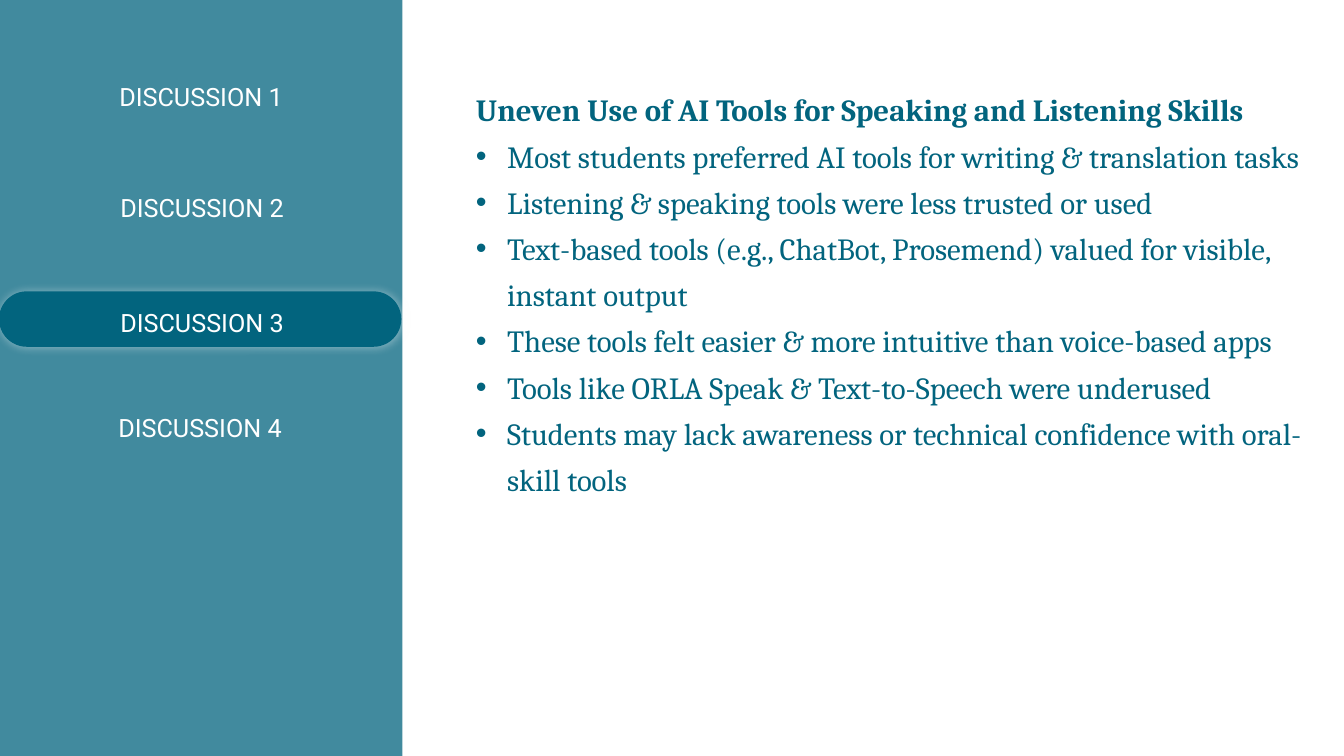
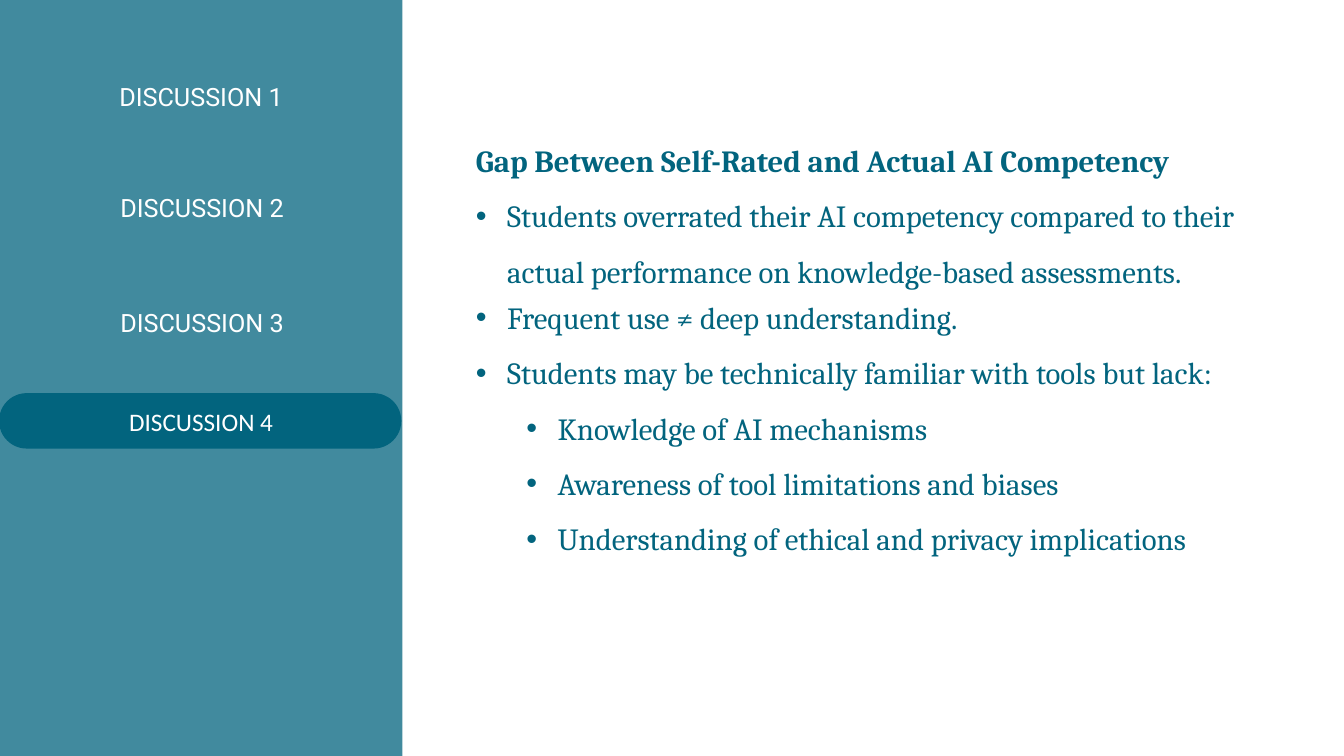
from dataclasses import dataclass

from lxml.etree import SubElement
from pptx import Presentation
from pptx.dml.color import RGBColor
from pptx.enum.shapes import MSO_SHAPE
from pptx.enum.text import MSO_ANCHOR, MSO_AUTO_SIZE, PP_ALIGN
from pptx.oxml.ns import qn
from pptx.util import Emu, Pt

SCALE = 9144  # EMU in one px, 100 px to the inch
WIDTH, HEIGHT = 1333, 750
SIDE = 399
TEXT_X, TEXT_W = 462, 842
HANG = 31
COLORS = {"teal": "02647E", "white": "FFFFFF"}
EXACT = Pt(33)
LOOSE = 1.5


@dataclass
class Label:
    text: str
    x: int
    y: int
    font: str = "Roboto"
    anchor: MSO_ANCHOR = MSO_ANCHOR.TOP


@dataclass
class Item:
    text: str
    spacing: float | Pt = EXACT
    level: int = 0


@dataclass
class Page:
    title: str
    top: int
    row: int
    spacing: float | Pt
    height: int
    items: list[Item]
    labels: list[Label]
    pill: int
    glow: bool = False


def px(*values: int) -> list[Emu]:
    return [Emu(value * SCALE) for value in values]


def write(para, text: str, *, size: int = 22, font: str = "Cambria",
          color: str = "teal", bold: bool = False, align=PP_ALIGN.LEFT,
          spacing: float | Pt | None = None, indent: int = 0,
          bullet: str = "") -> None:
    """Fill a paragraph with one run; a bullet hangs left of the indent."""
    if bullet:
        props = para._p.get_or_add_pPr()
        left, hang = px(indent, -HANG)
        props.set("marL", str(left))
        props.set("indent", str(hang))
        SubElement(props, qn("a:buFont")).set("typeface", "Arial")
        SubElement(props, qn("a:buChar")).set("char", bullet)
    para.alignment = align
    para.space_before = Pt(0)
    if spacing:
        para.line_spacing = spacing
    run = para.add_run()
    run.text = text
    run.font.size = Pt(size)
    run.font.name = font
    run.font.bold = bold
    run.font.color.rgb = RGBColor.from_string(COLORS[color])


def block(slide, kind, x: int, y: int, w: int, h: int):
    shape = slide.shapes.add_shape(kind, *px(x, y, w, h))
    shape.shadow.inherit = False
    shape.fill.solid()
    shape.fill.fore_color.rgb = RGBColor.from_string(COLORS["teal"])
    shape.line.fill.background()
    return shape


def fade(color, percent: int) -> None:
    SubElement(color, qn("a:alpha")).set("val", str(percent * 1000))


def shine(shape) -> None:
    """Put a soft white halo around a shape."""
    effects = shape.element.spPr.find(qn("a:effectLst"))
    halo = SubElement(effects, qn("a:outerShdw"))
    for key, value in {"blurRad": Pt(7), "dist": 0, "dir": 0,
                       "algn": "ctr", "rotWithShape": 0}.items():
        halo.set(key, str(value))
    color = SubElement(halo, qn("a:srgbClr"))
    color.set("val", COLORS["white"])
    fade(color, 40)


def menu(slide, page: Page) -> None:
    side = block(slide, MSO_SHAPE.RECTANGLE, 0, 0, SIDE, HEIGHT)
    fade(side.element.spPr.find(".//" + qn("a:srgbClr")), 75)
    pill = block(slide, MSO_SHAPE.ROUNDED_RECTANGLE, -1, page.pill, SIDE, 55)
    pill.adjustments[0] = 0.5
    if page.glow:
        shine(pill)
    for label in page.labels:
        box = slide.shapes.add_textbox(*px(label.x, label.y, 291, 40))
        frame = box.text_frame
        frame.word_wrap = True
        frame.vertical_anchor = label.anchor
        write(frame.paragraphs[0], label.text, size=18, font=label.font,
              color="white", align=PP_ALIGN.CENTER)


def place(holder, y: int, h: int):
    """Move a placeholder into the text column and return its frame."""
    holder.left, holder.top, holder.width, holder.height = px(
        TEXT_X, y, TEXT_W, h)
    frame = holder.text_frame
    frame.word_wrap = True
    frame.auto_size = MSO_AUTO_SIZE.NONE
    frame.vertical_anchor = MSO_ANCHOR.TOP
    frame.margin_left = frame.margin_right = px(10)[0]
    frame.margin_top = frame.margin_bottom = 0
    return frame


def build(deck, page: Page) -> None:
    slide = deck.slides.add_slide(deck.slide_layouts[1])
    menu(slide, page)
    head = place(slide.shapes.title, page.top, page.row)
    write(head.paragraphs[0], page.title, bold=True, spacing=page.spacing)
    body = place(slide.placeholders[1], page.top + page.row, page.height)
    for index, item in enumerate(page.items):
        para = body.add_paragraph() if index else body.paragraphs[0]
        para.level = item.level
        write(para, item.text, spacing=item.spacing, bullet="•",
              indent=HANG + 50 * item.level)


FIRST = [Label("DISCUSSION 1", 54, 76), Label("DISCUSSION 2", 55, 186),
         Label("DISCUSSION 3", 55, 300)]

PAGES = [
    Page("Uneven Use of AI Tools for Speaking and Listening Skills",
         top=81, row=46, spacing=EXACT, height=370,
         items=[
             Item("Most students preferred AI tools for writing & translation tasks"),
             Item("Listening & speaking tools were less trusted or used"),
             Item("Text-based tools (e.g., ChatBot, Prosemend) valued for visible, instant output"),
             Item("These tools felt easier & more intuitive than voice-based apps"),
             Item("Tools like ORLA Speak & Text-to-Speech were underused"),
             Item("Students may lack awareness or technical confidence with oral-skill tools"),
         ],
         labels=[*FIRST, Label("DISCUSSION 4", 53, 404)],
         pill=289, glow=True),
    Page("Gap Between Self-Rated and Actual AI Competency",
         top=122, row=55, spacing=LOOSE, height=383,
         items=[
             Item("Students overrated their AI competency compared to their actual "
                  "performance on knowledge-based assessments.", LOOSE),
             Item("Frequent use ≠ deep understanding."),
             Item("Students may be technically familiar with tools but lack:", LOOSE),
             Item("Knowledge of AI mechanisms", LOOSE, 1),
             Item("Awareness of tool limitations and biases", LOOSE, 1),
             Item("Understanding of ethical and privacy implications", LOOSE, 1),
         ],
         labels=[*FIRST, Label("DISCUSSION 4", 54, 398, "Calibri",
                               MSO_ANCHOR.MIDDLE)],
         pill=390),
]


def main() -> None:
    deck = Presentation()
    deck.slide_width, deck.slide_height = px(WIDTH, HEIGHT)
    for page in PAGES:
        build(deck, page)
    deck.save("out.pptx")


if __name__ == "__main__":
    main()
